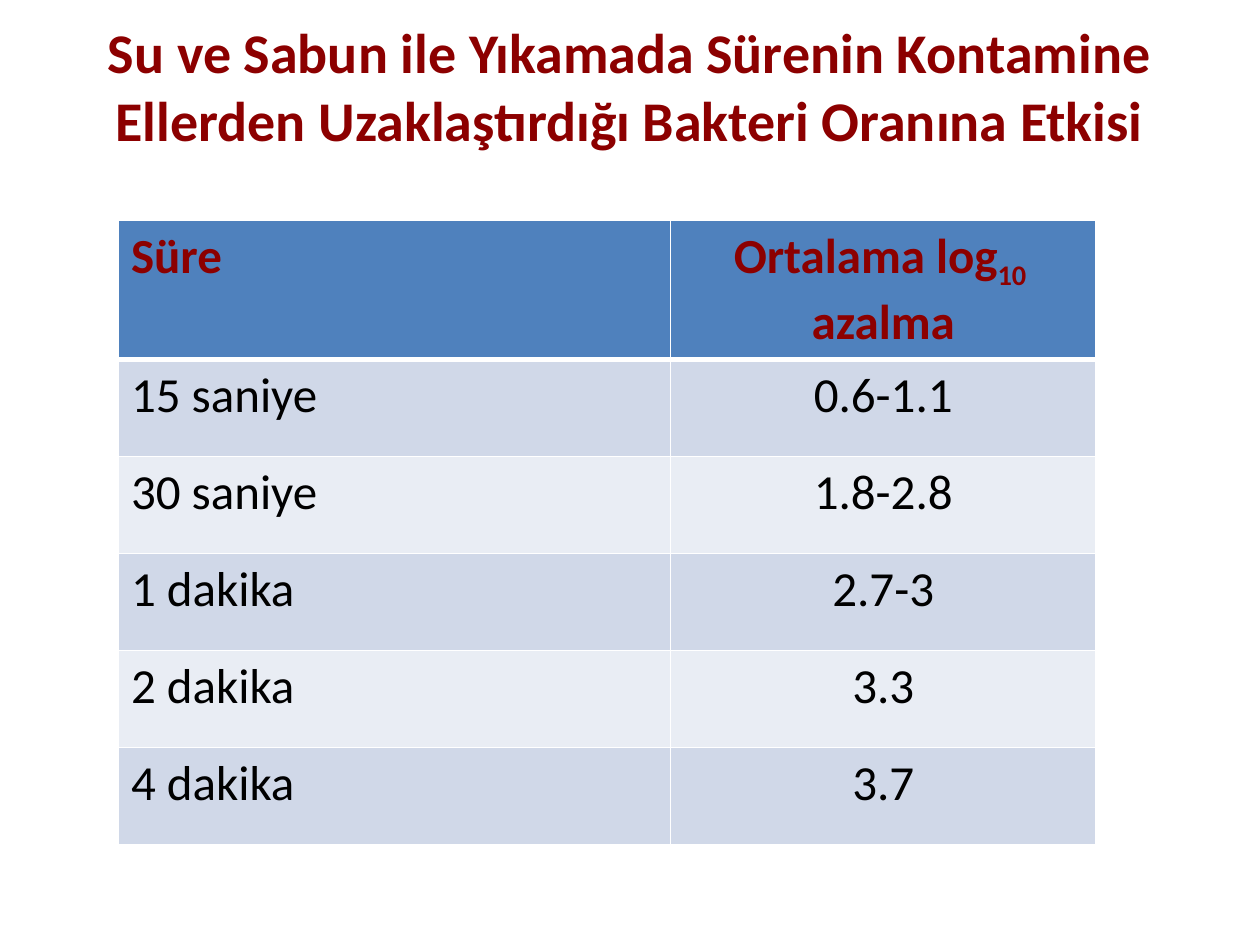
from lxml.etree import SubElement
from pptx import Presentation
from pptx.dml.color import RGBColor
from pptx.enum.text import MSO_ANCHOR, MSO_AUTO_SIZE, PP_ALIGN
from pptx.oxml.ns import qn
from pptx.util import Inches, Pt

# Content
TITLE = ("Su ve Sabun ile Yıkamada Sürenin Kontamine "
         "Ellerden Uzaklaştırdığı Bakteri Oranına Etkisi")
SUBSCRIPT = "10 "
HEADER = ["Süre", ["Ortalama log", "azalma"]]
ROWS = [
    ("15 saniye", "0.6-1.1"),
    ("30 saniye", "1.8-2.8"),
    ("1 dakika", "2.7-3"),
    ("2 dakika", "3.3"),
    ("4 dakika", "3.7"),
]

# Look
FONT = "Calibri"
DARK_RED, BLACK, WHITE = "8C0000", "000000", "FFFFFF"
HEADER_FILL, BAND_FILLS = "4F81BD", ("D0D8E8", "E9EDF4")
COLUMN_WIDTHS = (4.38, 3.38)
HEADER_HEIGHT, ROW_HEIGHT = 1.09, 0.77


def color(hex_string):
    return RGBColor.from_string(hex_string)


def format_paragraph(paragraph, size, hex_string, bold, alignment):
    paragraph.alignment = alignment
    font = paragraph.font
    font.name, font.size, font.bold = FONT, Pt(size), bold
    font.color.rgb = color(hex_string)


def add_borders(cell, bottom_width):
    properties = cell._tc.get_or_add_tcPr()
    for side, width in (("L", 1), ("R", 1), ("T", 1), ("B", bottom_width)):
        line = SubElement(properties, qn(f"a:ln{side}"), w=str(Pt(width)))
        fill = SubElement(line, qn("a:solidFill"))
        SubElement(fill, qn("a:srgbClr"), val=WHITE)


def fill_cell(cell, lines, column, hex_fill, is_header):
    add_borders(cell, 3 if is_header else 1)
    cell.fill.solid()
    cell.fill.fore_color.rgb = color(hex_fill)
    cell.text = "\n".join(lines)
    for paragraph in cell.text_frame.paragraphs:
        format_paragraph(paragraph, 28, DARK_RED if is_header else BLACK, is_header,
                         PP_ALIGN.CENTER if column else PP_ALIGN.LEFT)


presentation = Presentation()
presentation.slide_width, presentation.slide_height = Inches(10), Inches(7.5)
slide = presentation.slides.add_slide(presentation.slide_layouts[5])

# Title, raised above the middle of its box by the bottom margin
title = slide.shapes.title
title.left, title.top = Inches(0.5), Inches(0.3)
title.width, title.height = Inches(9), Inches(1.25)
title_frame = title.text_frame
title_frame.text = TITLE
title_frame.auto_size = MSO_AUTO_SIZE.NONE
title_frame.vertical_anchor = MSO_ANCHOR.MIDDLE
title_frame.margin_bottom = Inches(0.55)
format_paragraph(title_frame.paragraphs[0], 32, DARK_RED, True, PP_ALIGN.CENTER)

# Table
table = slide.shapes.add_table(
    len(ROWS) + 1, len(COLUMN_WIDTHS), Inches(0.94), Inches(1.75),
    Inches(sum(COLUMN_WIDTHS)), Inches(HEADER_HEIGHT + ROW_HEIGHT * len(ROWS))).table
for column, width in zip(table.columns, COLUMN_WIDTHS):
    column.width = Inches(width)
for row_index, values in enumerate([HEADER, *ROWS]):
    is_header = row_index == 0
    table.rows[row_index].height = Inches(HEADER_HEIGHT if is_header else ROW_HEIGHT)
    hex_fill = HEADER_FILL if is_header else BAND_FILLS[(row_index - 1) % 2]
    for column_index, value in enumerate(values):
        lines = [value] if isinstance(value, str) else value
        fill_cell(table.cell(row_index, column_index), lines, column_index,
                  hex_fill, is_header)

# Subscript of the logarithm
subscript = table.cell(0, 1).text_frame.paragraphs[0].add_run()
subscript.text = SUBSCRIPT
subscript.font._element.set("baseline", "-25000")

presentation.save("out.pptx")
